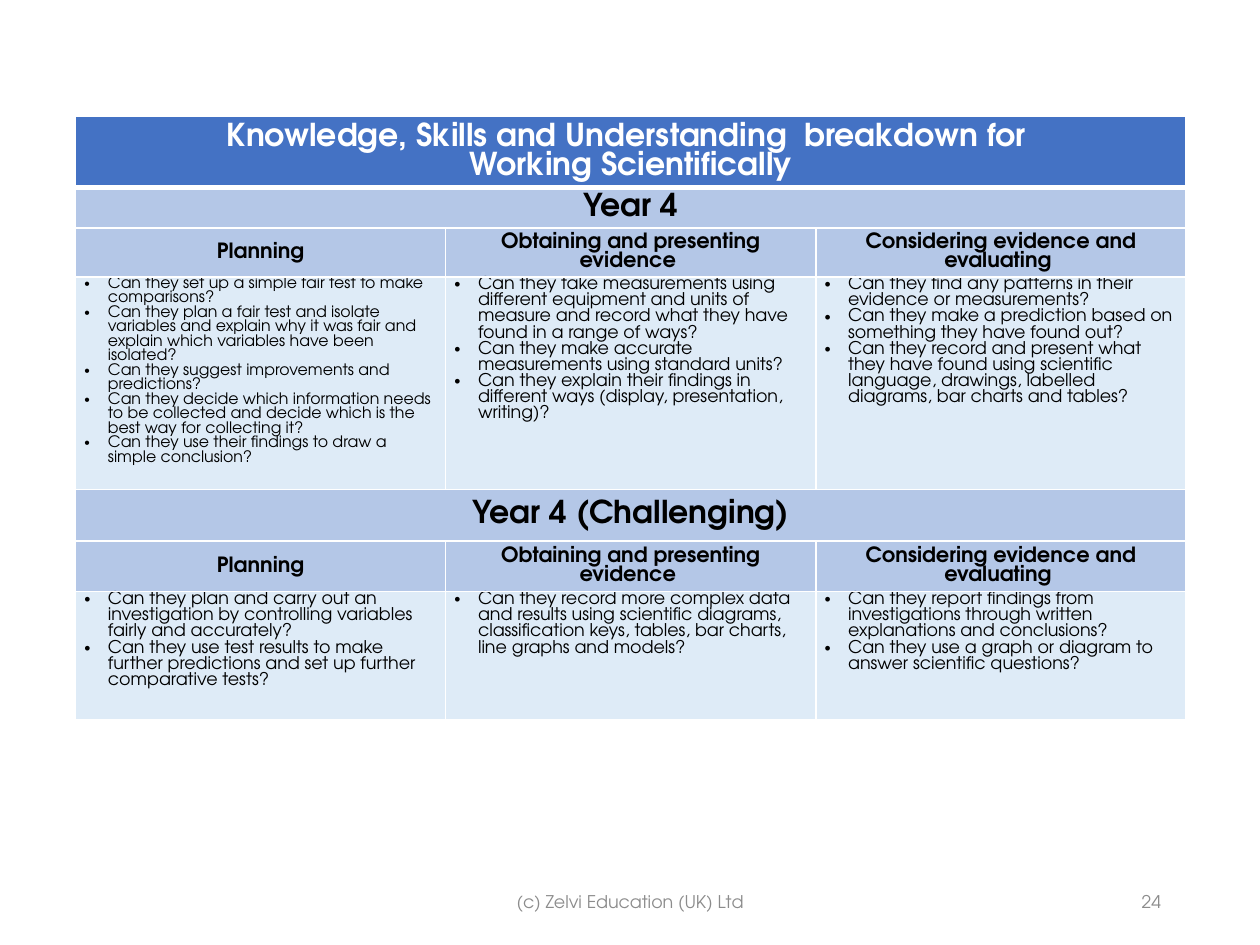
from dataclasses import dataclass

from lxml.etree import SubElement
from pptx import Presentation
from pptx.dml.color import RGBColor
from pptx.enum.text import MSO_ANCHOR, PP_ALIGN
from pptx.oxml.ns import qn
from pptx.util import Pt

FONT = "TeX Gyre Adventor"
COLOURS = {
    "title": "4472C4",
    "heading": "B4C7E7",
    "body": "DEEBF7",
    "white": "FFFFFF",
    "black": "000000",
    "footer": "8C8C8C",
}
COLUMN_WIDTH = 211.5
INDENT = 13.5


@dataclass
class RowStyle:
    fill: str
    size: float
    colour: str = "black"
    bold: bool = True
    bulleted: bool = False
    anchor: MSO_ANCHOR = MSO_ANCHOR.MIDDLE
    margin_x: float = 5
    margin_y: float = 0
    bottom_line: float = 1


@dataclass
class TableRow:
    height: float
    style: RowStyle
    cells: list[list[str]]  # paragraphs per cell; a single cell spans the row
    sizes: tuple[float, ...] = ()  # text sizes that differ by column


@dataclass
class Footer:
    left: float
    width: float
    text: str
    align: PP_ALIGN


TITLE = RowStyle("title", 18, "white", anchor=MSO_ANCHOR.TOP,
                 margin_x=7.2, margin_y=3.6, bottom_line=3)
YEAR = RowStyle("heading", 18)
HEADING = RowStyle("heading", 12)
BODY = RowStyle("body", 10, bold=False, bulleted=True, anchor=MSO_ANCHOR.TOP)

AREAS = [
    ["Planning"],
    ["Obtaining and presenting evidence "],
    ["Considering evidence and evaluating "],
]
ROWS = [
    TableRow(40, TITLE, [["Knowledge, Skills and Understanding  breakdown for ",
                          "Working Scientifically"]]),
    TableRow(23, YEAR, [["Year 4"]]),
    TableRow(28, HEADING, AREAS),
    TableRow(121.5, BODY, [
        ["Can they set up a simple fair test to make comparisons?",
         "Can they plan a fair test and isolate variables and explain why it was "
         "fair and explain which variables have been isolated?",
         "Can they suggest improvements and predictions?",
         "Can they decide which information needs to be collected and decide "
         "which is the best way for collecting it?",
         "Can they use their findings to draw a simple conclusion?"],
        ["Can they take measurements using different equipment and units of "
         "measure and record what they have found in a range of ways?",
         "Can they make accurate measurements using standard units?",
         "Can they explain their findings in different ways (display, "
         "presentation, writing)?"],
        ["Can they find any patterns in their evidence or measurements?",
         "Can they make a prediction based on something they have found out?",
         "Can they record and present what they have found using scientific "
         "language, drawings, labelled diagrams, bar charts and tables?"],
    ], sizes=(9, 10, 10)),
    TableRow(29.5, YEAR, [["Year 4 (Challenging)"]]),
    TableRow(29, HEADING, AREAS),
    TableRow(73, BODY, [
        ["Can they plan and carry out an investigation by controlling variables "
         "fairly and accurately?",
         "Can they use test results to make further predictions and set up "
         "further comparative tests?"],
        ["Can they record more complex data and results using scientific "
         "diagrams, classification keys, tables, bar charts, line graphs and "
         "models?"],
        ["Can they report findings from investigations through written "
         "explanations and conclusions?",
         "Can they use a graph or diagram to answer scientific questions?"],
    ]),
]
FOOTERS = [
    Footer(238.5, 243, "(c) Zelvi Education (UK) Ltd", PP_ALIGN.CENTER),
    Footer(508.5, 162, "24", PP_ALIGN.RIGHT),
]


def rgb(name: str) -> RGBColor:
    return RGBColor.from_string(COLOURS[name])


def format_paragraph(para, size: float, colour: str, bold: bool, align) -> None:
    para.alignment = align
    for span in para.runs:
        span.font.name = FONT
        span.font.size = Pt(size)
        span.font.bold = bold
        span.font.color.rgb = rgb(colour)


def add_bullet(para) -> None:
    properties = para._p.get_or_add_pPr()
    properties.set("marL", str(Pt(INDENT)))
    properties.set("indent", str(-Pt(INDENT)))
    SubElement(properties, qn("a:buFont"), typeface="Arial")
    SubElement(properties, qn("a:buChar"), char="•")


def set_borders(cell, top: float, bottom: float) -> None:
    properties = cell._tc.get_or_add_tcPr()
    widths = {"a:lnL": 1, "a:lnR": 1, "a:lnT": top, "a:lnB": bottom}
    for position, (tag, width) in enumerate(widths.items()):
        line = SubElement(properties, qn(tag), w=str(Pt(width)))
        fill = SubElement(line, qn("a:solidFill"))
        SubElement(fill, qn("a:srgbClr"), val=COLOURS["white"])
        properties.insert(position, line)  # borders come before the fill


def style_cell(cell, style: RowStyle, top_line: float) -> None:
    cell.fill.solid()
    cell.fill.fore_color.rgb = rgb(style.fill)
    cell.vertical_anchor = style.anchor
    cell.margin_left = cell.margin_right = Pt(style.margin_x)
    cell.margin_top = cell.margin_bottom = Pt(style.margin_y)
    set_borders(cell, top_line, style.bottom_line)


def write_cell(cell, paragraphs: list[str], style: RowStyle, size: float) -> None:
    cell.text_frame.text = "\n".join(paragraphs)
    align = PP_ALIGN.LEFT if style.bulleted else PP_ALIGN.CENTER
    for para in cell.text_frame.paragraphs:
        format_paragraph(para, size, style.colour, style.bold, align)
        if style.bulleted:
            add_bullet(para)


def add_skills_table(page) -> None:
    height = sum(row.height for row in ROWS)
    frame = page.shapes.add_table(len(ROWS), len(AREAS), Pt(43.2), Pt(66.6),
                                  Pt(COLUMN_WIDTH * len(AREAS)), Pt(height))
    table = frame.table
    for column in table.columns:
        column.width = Pt(COLUMN_WIDTH)
    top_line = 1
    for index, row in enumerate(ROWS):
        table.rows[index].height = Pt(row.height)
        for column in range(len(AREAS)):
            cell = table.cell(index, column)
            style_cell(cell, row.style, top_line)
            if column < len(row.cells):
                size = row.sizes[column] if row.sizes else row.style.size
                write_cell(cell, row.cells[column], row.style, size)
        if len(row.cells) == 1:
            table.cell(index, 0).merge(table.cell(index, len(AREAS) - 1))
        top_line = row.style.bottom_line


def add_footer(page, footer: Footer) -> None:
    box = page.shapes.add_textbox(Pt(footer.left), Pt(500.5),
                                  Pt(footer.width), Pt(28.8))
    frame = box.text_frame
    frame.word_wrap = True
    frame.vertical_anchor = MSO_ANCHOR.MIDDLE
    frame.text = footer.text
    format_paragraph(frame.paragraphs[0], 10, "footer", False, footer.align)


def main() -> None:
    deck = Presentation()
    deck.slide_width, deck.slide_height = Pt(720), Pt(540)
    page = deck.slides.add_slide(deck.slide_layouts[6])

    # Skills table
    add_skills_table(page)

    # Footer line and page number
    for footer in FOOTERS:
        add_footer(page, footer)

    deck.save("out.pptx")


if __name__ == "__main__":
    main()
